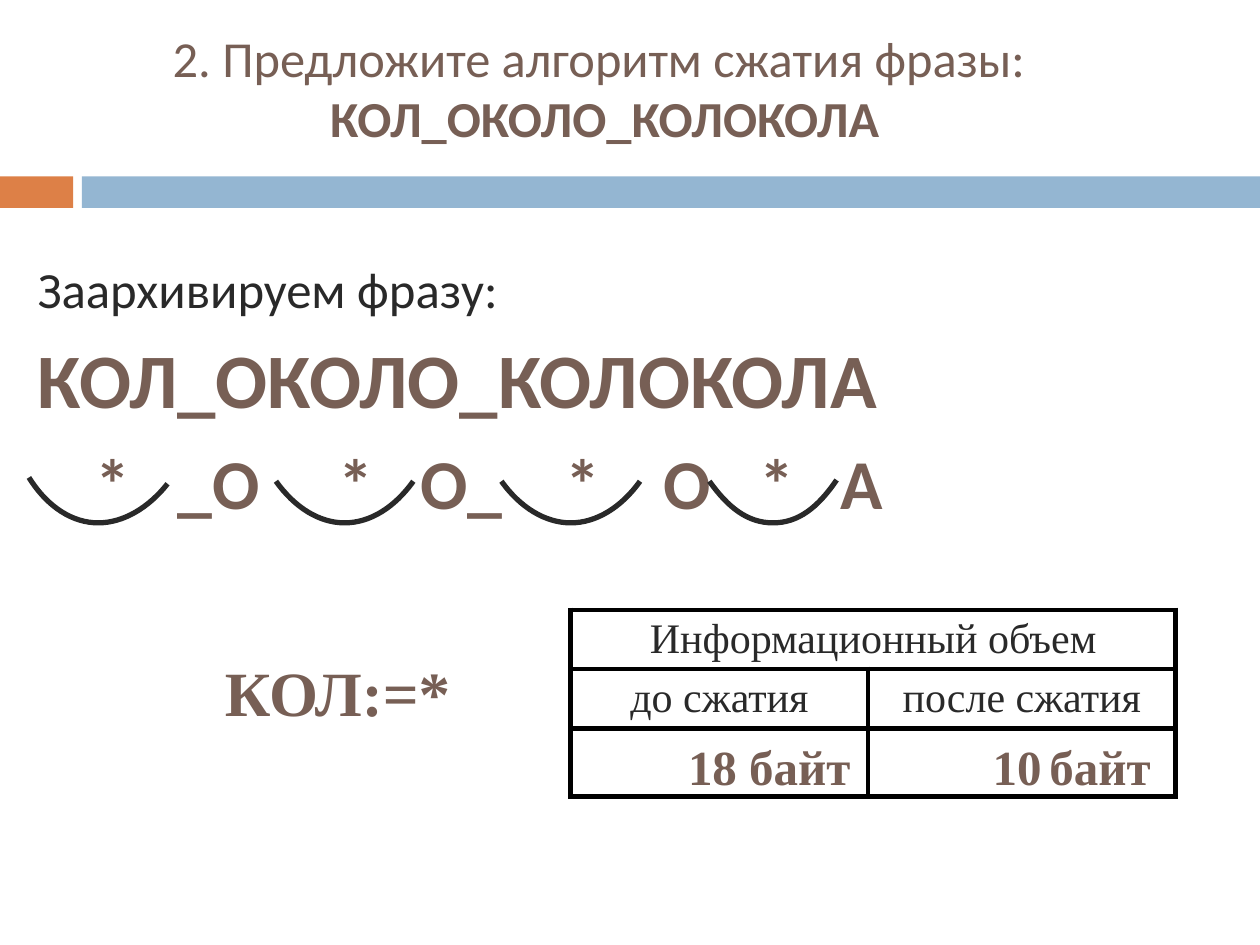
from lxml import etree
from pptx import Presentation
from pptx.dml.color import RGBColor
from pptx.enum.shapes import MSO_SHAPE as Preset
from pptx.enum.text import MSO_ANCHOR as Anchor, PP_ALIGN as Align
from pptx.oxml.ns import qn
from pptx.util import Inches, Pt

COLORS = {
    "orange": "DD8047", "blue": "94B6D2", "brown": "775F55",
    "dark": "292929", "white": "FFFFFF", "black": "000000",
}
SANS, SERIF = "Calibri", "Times New Roman"
PHRASE = "КОЛ_ОКОЛО_КОЛОКОЛА"


def rgb(name):
    return RGBColor.from_string(COLORS[name])


def write(paragraph, text, size=28, font=SERIF, color="brown", bold=False,
          align=Align.LEFT, before=0, spacing=None):
    """Add one formatted run and set the format of its paragraph."""
    run = paragraph.add_run()
    run.text = text
    run.font.size, run.font.name, run.font.bold = Pt(size), font, bold
    run.font.color.rgb = rgb(color)
    paragraph.alignment = align
    paragraph.space_before = Pt(before)
    if spacing:
        paragraph.line_spacing = spacing


def add_text_box(slide, left, top, width, height, anchor=Anchor.TOP):
    box = slide.shapes.add_textbox(
        Inches(left), Inches(top), Inches(width), Inches(height))
    frame = box.text_frame
    frame.word_wrap = True
    frame.vertical_anchor = anchor
    return frame


def add_rectangle(slide, left, top, width, height, color):
    shape = slide.shapes.add_shape(
        Preset.RECTANGLE, Inches(left), Inches(top), Inches(width), Inches(height))
    shape.shadow.inherit = False
    shape.fill.solid()
    shape.fill.fore_color.rgb = rgb(color)
    shape.line.fill.background()
    return shape


def add_tab_stops(paragraph, positions):
    tabs = etree.SubElement(paragraph._p.get_or_add_pPr(), qn("a:tabLst"))
    for position in positions:
        etree.SubElement(tabs, qn("a:tab"), pos=str(Inches(position)), algn="l")


def add_coded_line(slide):
    """Write the phrase with each replaced syllable shown as an asterisk."""
    frame = add_rectangle(slide, 0.16, 3.44, 7.5, 0.77, "white").text_frame
    frame.word_wrap = True
    frame.vertical_anchor = Anchor.TOP
    paragraph = frame.paragraphs[0]
    parts = {0.5: "*", 1.15: "_О", 2.43: "*", 3.08: "О_",
             4.23: "*", 5.01: "О", 5.77: "*", 6.41: "А"}
    write(paragraph, "".join(f"\t{part}" for part in parts.values()),
          size=40, font=SANS, bold=True)
    add_tab_stops(paragraph, parts)


def add_arc(slide, left, width, left_end=3.82, right_end=3.82):
    """Draw an open arc of two Bézier curves; its box reaches up to the centre."""
    centre, bottom = 2.89, 4.15
    middle, right = left + width / 2, left + width
    controls = [
        (right - 0.15, 4.03), (middle + 0.2, bottom), (middle, bottom),
        (middle - 0.2, bottom), (left + 0.15, 4.03), (left, left_end),
    ]
    builder = slide.shapes.build_freeform(Inches(right), Inches(right_end))
    builder.add_line_segments([(Inches(x), Inches(y)) for x, y in controls], close=False)
    builder.move_to(Inches(middle), Inches(centre))
    arc = builder.convert_to_shape()

    segments = list(arc._element.iter(qn("a:lnTo")))
    for first in (0, 3):
        curve = etree.Element(qn("a:cubicBezTo"))
        segments[first].addprevious(curve)
        for segment in segments[first:first + 3]:
            curve.append(segment[0])
            segment.getparent().remove(segment)

    arc.shadow.inherit = False
    arc.fill.background()
    arc.line.color.rgb = rgb("dark")
    arc.line.width = Pt(3)


def format_cell(cell):
    properties = cell._tc.get_or_add_tcPr()
    for side in ("lnL", "lnR", "lnT", "lnB"):
        line = etree.SubElement(properties, qn(f"a:{side}"), w=str(Pt(3)))
        fill = etree.SubElement(line, qn("a:solidFill"))
        etree.SubElement(fill, qn("a:srgbClr"), val=COLORS["black"])
    cell.fill.background()
    cell.margin_bottom = Inches(0.01)


def add_volume_table(slide):
    table = slide.shapes.add_table(
        3, 2, Inches(4.53), Inches(4.84), Inches(4.8), Inches(1.48)).table
    table.first_row = table.horz_banding = False
    for column, width in zip(table.columns, (2.36, 2.44)):
        column.width = Inches(width)
    for row, height in zip(table.rows, (0.47, 0.47, 0.54)):
        row.height = Inches(height)
    for cell in table.iter_cells():
        format_cell(cell)
    table.cell(0, 0).merge(table.cell(0, 1))
    labels = {(0, 0): "Информационный объем",
              (1, 0): "до сжатия", (1, 1): "после сжатия"}
    for position, label in labels.items():
        write(table.cell(*position).text_frame.paragraphs[0], label,
              size=24, color="dark", align=Align.CENTER)


def main():
    presentation = Presentation()
    presentation.slide_width, presentation.slide_height = Inches(10), Inches(7.5)
    slide = presentation.slides.add_slide(presentation.slide_layouts[6])

    add_rectangle(slide, 0, 1.4, 0.58, 0.25, "orange")
    add_rectangle(slide, 0.65, 1.4, 9.35, 0.25, "blue")

    title = add_text_box(slide, 0.39, 0.31, 8.82, 1.25, Anchor.MIDDLE)
    title.margin_top, title.margin_bottom = 0, Inches(0.48)
    heading = title.paragraphs[0]
    write(heading, "2. Предложите алгоритм сжатия фразы: ",
          size=28.8, font=SANS, align=Align.CENTER)
    heading.add_line_break()
    write(heading, PHRASE, size=28.8, font=SANS, bold=True, align=Align.CENTER)

    body = add_text_box(slide, 0.2, 2, 9.45, 2.85)
    write(body.paragraphs[0], "Заархивируем фразу:", size=29, font=SANS, color="dark")
    write(body.add_paragraph(), PHRASE, size=44, font=SANS, bold=True, before=7)

    add_volume_table(slide)
    before = add_text_box(slide, 5.24, 5.8, 1.73, 0.57)
    write(before.paragraphs[0], "18 байт", bold=True, align=Align.CENTER)
    rule = add_text_box(slide, 1.3, 5.25, 2.76, 0.58)
    write(rule.paragraphs[0], "КОЛ:=*", size=36, bold=True,
          align=Align.CENTER, spacing=0.8)

    add_coded_line(slide)
    add_arc(slide, 0.23, 1.1, left_end=3.79, right_end=3.84)
    add_arc(slide, 2.19, 1.09)
    add_arc(slide, 3.98, 1.1)
    add_arc(slide, 5.63, 1.01, right_end=3.81)

    after = add_text_box(slide, 7.6, 5.8, 1.81, 0.57).paragraphs[0]
    write(after, "10", bold=True, align=Align.CENTER)
    write(after, " ", size=18, color="black", align=Align.CENTER)
    write(after, "байт", bold=True, align=Align.CENTER)

    presentation.save("out.pptx")


if __name__ == "__main__":
    main()
